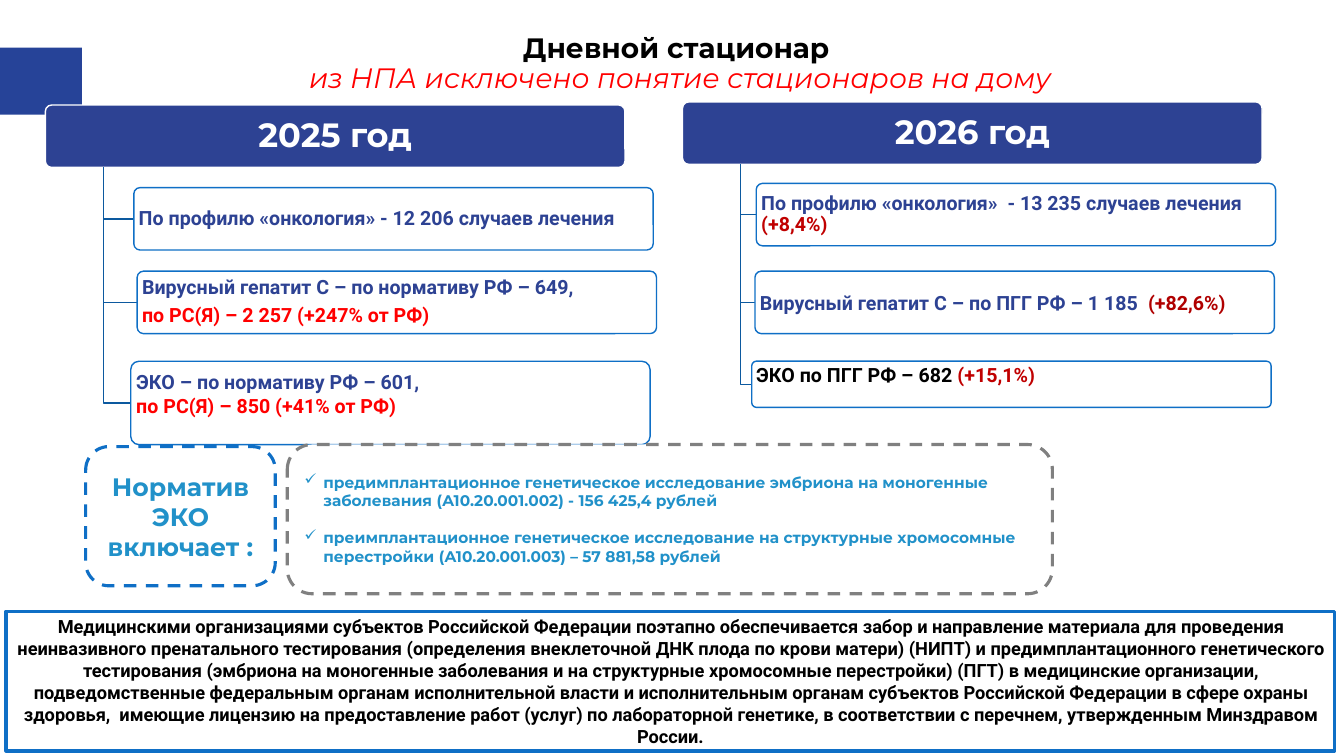
"""Build the day hospital slide comparing the 2025 and 2026 care norms."""
from dataclasses import dataclass

from lxml.etree import SubElement
from pptx import Presentation
from pptx.dml.color import RGBColor
from pptx.enum.dml import MSO_LINE
from pptx.enum.shapes import MSO_SHAPE as Shape
from pptx.enum.text import MSO_ANCHOR as Anchor, MSO_AUTO_SIZE as AutoSize, PP_ALIGN as Align
from pptx.oxml.ns import qn
from pptx.util import Pt


@dataclass(frozen=True)
class Theme:
    heading_font: str = "Montserrat"
    body_font: str = "Roboto"
    navy: str = "2D4293"
    corner: str = "264398"
    blue: str = "0F6FC6"
    branch: str = "0C599F"
    sky: str = "2191C9"
    red: str = "FF0000"
    dark_red: str = "C00000"
    deep_red: str = "B00000"
    gray: str = "808080"
    black: str = "000000"
    white: str = "FFFFFF"
    title_size: int = 20
    year_size: int = 24
    card_size: int = 14
    norm_size: int = 18
    list_size: int = 11
    note_size: int = 13


theme = Theme()
presentation = Presentation()
presentation.slide_width, presentation.slide_height = Pt(960), Pt(540)
slide = presentation.slides.add_slide(presentation.slide_layouts[5])


def add_text(paragraph, text, *, size, color, font=theme.body_font, bold=True, italic=False):
    run = paragraph.add_run()
    run.text = text
    run.font.name, run.font.size = font, Pt(size)
    run.font.bold, run.font.italic = bold, italic
    run.font.color.rgb = RGBColor.from_string(color)


def add_box(kind, bounds, *, fill=theme.white, line=None, weight=1, dash=False,
            rounding=None, insets=(7.2, 3.6), align=Align.LEFT):
    shape = slide.shapes.add_shape(kind, *map(Pt, bounds))
    shape.shadow.inherit = False
    shape.fill.solid()
    shape.fill.fore_color.rgb = RGBColor.from_string(fill)
    if line:
        shape.line.color.rgb = RGBColor.from_string(line)
        shape.line.width = Pt(weight)
    else:
        shape.line.fill.background()
    if dash:
        shape.line.dash_style = MSO_LINE.DASH
    if rounding is not None:
        shape.adjustments[0] = rounding
    frame = shape.text_frame
    frame.word_wrap, frame.vertical_anchor = True, Anchor.MIDDLE
    frame.margin_left = frame.margin_right = Pt(insets[0])
    frame.margin_top = frame.margin_bottom = Pt(insets[1])
    frame.paragraphs[0].alignment = align
    return frame


title = slide.shapes.title
title.left, title.top, title.width, title.height = Pt(63), Pt(22), Pt(846), Pt(48)
title_frame = title.text_frame
title_frame.auto_size, title_frame.word_wrap = AutoSize.NONE, True
title_frame.vertical_anchor = Anchor.MIDDLE
heading = title_frame.paragraphs[0]
heading.alignment, heading.line_spacing = Align.CENTER, 0.9
add_text(heading, "Дневной стационар ", size=theme.title_size, color=theme.black,
         font=theme.heading_font)
heading.add_line_break()
add_text(heading, "из НПА исключено понятие стационаров на дому", size=theme.title_size,
         color=theme.red, font=theme.heading_font, bold=False, italic=True)

add_box(Shape.RECTANGLE, (-10, 34, 68.6, 48), fill=theme.corner)

header_width, header_height, card_width, trunk_offset = 414, 44.6, 371, 41.4
years = [
    ("2025 год", 32.4, 75, [
        (95.6, 134, 44.6, 0.9, 0, None,
         [[("По профилю «онкология» - 12 206 случаев лечения", theme.navy)]]),
        (98, 193.7, 44.6, 0.9, 5, None,
         [[("Вирусный гепатит С – по нормативу РФ – 649,", theme.navy)],
          [("по РС(Я) – 2 257 (+247% от РФ)", theme.red)]]),
        (93.4, 258, 59.6, 1, 0, 4.5,
         [[("ЭКО – по нормативу РФ – 601,", theme.navy)],
          [("по РС(Я) – 850 (+41% от РФ)", theme.red)]]),
    ]),
    ("2026 год", 487.5, 72.8, [
        (540.2, 131, 44.6, 0.9, 0, None,
         [[("По профилю «онкология»  - 13 235 случаев лечения ", theme.navy),
           ("(+8,4%)", theme.dark_red)]]),
        (539.3, 193.7, 44.6, 1, 0, None,
         [[("Вирусный гепатит С – по ПГГ РФ – 1 185  ", theme.navy),
           ("(+82,6%)", theme.deep_red)]]),
        (537, 258, 33, 1, 0, 0,
         [[("ЭКО по ПГГ РФ – 682 ", theme.black), ("(+15,1%)", theme.dark_red)]]),
    ]),
]
for year, header_left, header_top, cards in years:
    header = add_box(Shape.ROUNDED_RECTANGLE,
                     (header_left, header_top, header_width, header_height),
                     fill=theme.navy, line=theme.white, rounding=0.1,
                     insets=(3.6, 2.2), align=Align.CENTER)
    header.paragraphs[0].line_spacing = 0.9
    add_text(header.paragraphs[0], year, size=theme.year_size, color=theme.white,
             font=theme.heading_font)
    trunk = header_left + trunk_offset
    for left, top, height, spacing, gap, top_inset, lines in cards:
        middle = top + height / 2
        builder = slide.shapes.build_freeform(Pt(trunk), Pt(header_top + header_height))
        builder.add_line_segments([(Pt(trunk), Pt(middle)), (Pt(left), Pt(middle))], close=False)
        branch = builder.convert_to_shape()
        branch.shadow.inherit = False
        branch.fill.background()
        branch.line.color.rgb = RGBColor.from_string(theme.branch)
        branch.line.width = Pt(1)
        card = add_box(Shape.ROUNDED_RECTANGLE, (left, top, card_width, height),
                       line=theme.blue, rounding=0.1, insets=(2.2, 1.4))
        if top_inset is not None:
            card.vertical_anchor, card.margin_top = Anchor.TOP, Pt(top_inset)
        for index, runs in enumerate(lines):
            paragraph = card.add_paragraph() if index else card.paragraphs[0]
            paragraph.alignment, paragraph.line_spacing = Align.LEFT, spacing
            if index:
                paragraph.space_before = Pt(gap)
            for text, color in runs:
                add_text(paragraph, text, size=theme.card_size, color=color)

norm = add_box(Shape.ROUNDED_RECTANGLE, (61.2, 319, 135.4, 99.4), line=theme.blue,
               weight=2.25, dash=True, align=Align.CENTER)
add_text(norm.paragraphs[0], "Норматив ЭКО включает :", size=theme.norm_size,
         color=theme.sky, font=theme.heading_font)

studies = add_box(Shape.ROUNDED_RECTANGLE, (205.2, 317.5, 546.5, 106.6), line=theme.gray,
                  weight=2.25, dash=True)
study_texts = [
    "предимплантационное генетическое исследование эмбриона на моногенные заболевания "
    "(А10.20.001.002) - 156 425,4 рублей",
    "преимплантационное генетическое исследование на структурные хромосомные перестройки "
    "(А10.20.001.003) – 57 881,58 рублей",
]
for index, text in enumerate(study_texts):
    paragraph = studies.add_paragraph() if index else studies.paragraphs[0]
    paragraph.alignment = Align.LEFT
    if index:
        paragraph.space_before = Pt(13.4)
    properties = paragraph._p.get_or_add_pPr()
    properties.set("marL", str(Pt(13.5)))
    properties.set("indent", str(Pt(-13.5)))
    SubElement(properties, qn("a:buChar")).set("char", "✓")
    add_text(paragraph, text, size=theme.list_size, color=theme.sky, font=theme.heading_font)

note = add_box(Shape.RECTANGLE, (4.3, 436.5, 949, 100), line=theme.blue, weight=2.25,
               align=Align.CENTER)
add_text(
    note.paragraphs[0],
    "Медицинскими организациями субъектов Российской Федерации поэтапно обеспечивается забор "
    "и направление материала для проведения неинвазивного пренатального тестирования "
    "(определения внеклеточной ДНК плода по крови матери) (НИПТ) и предимплантационного "
    "генетического тестирования (эмбриона на моногенные заболевания и на структурные "
    "хромосомные перестройки) (ПГТ) в медицинские организации, подведомственные федеральным "
    "органам исполнительной власти и исполнительным органам субъектов Российской Федерации "
    "в сфере охраны здоровья,  имеющие лицензию на предоставление работ (услуг) по "
    "лабораторной генетике, в соответствии с перечнем, утвержденным Минздравом России.",
    size=theme.note_size, color=theme.black)

presentation.save("out.pptx")
